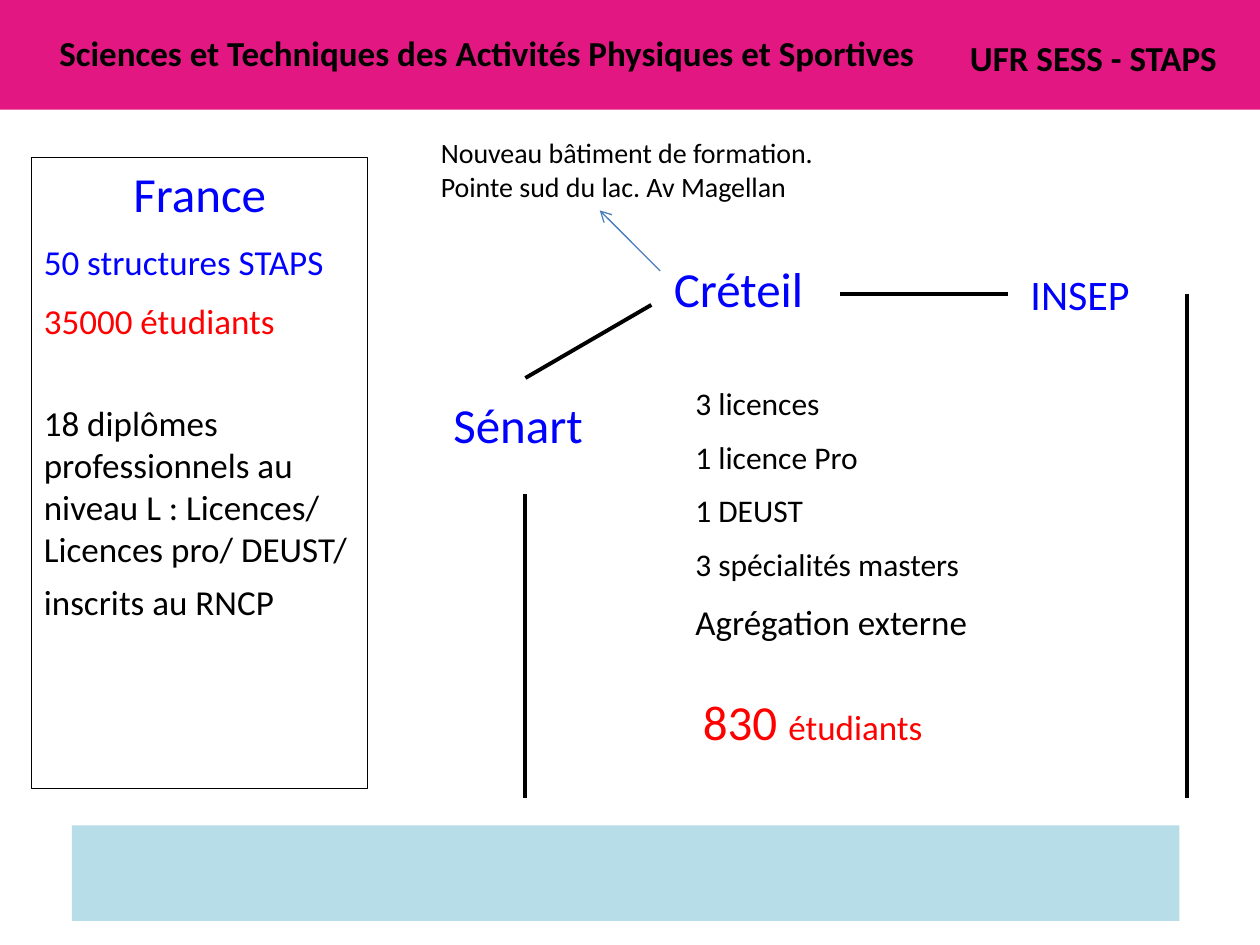
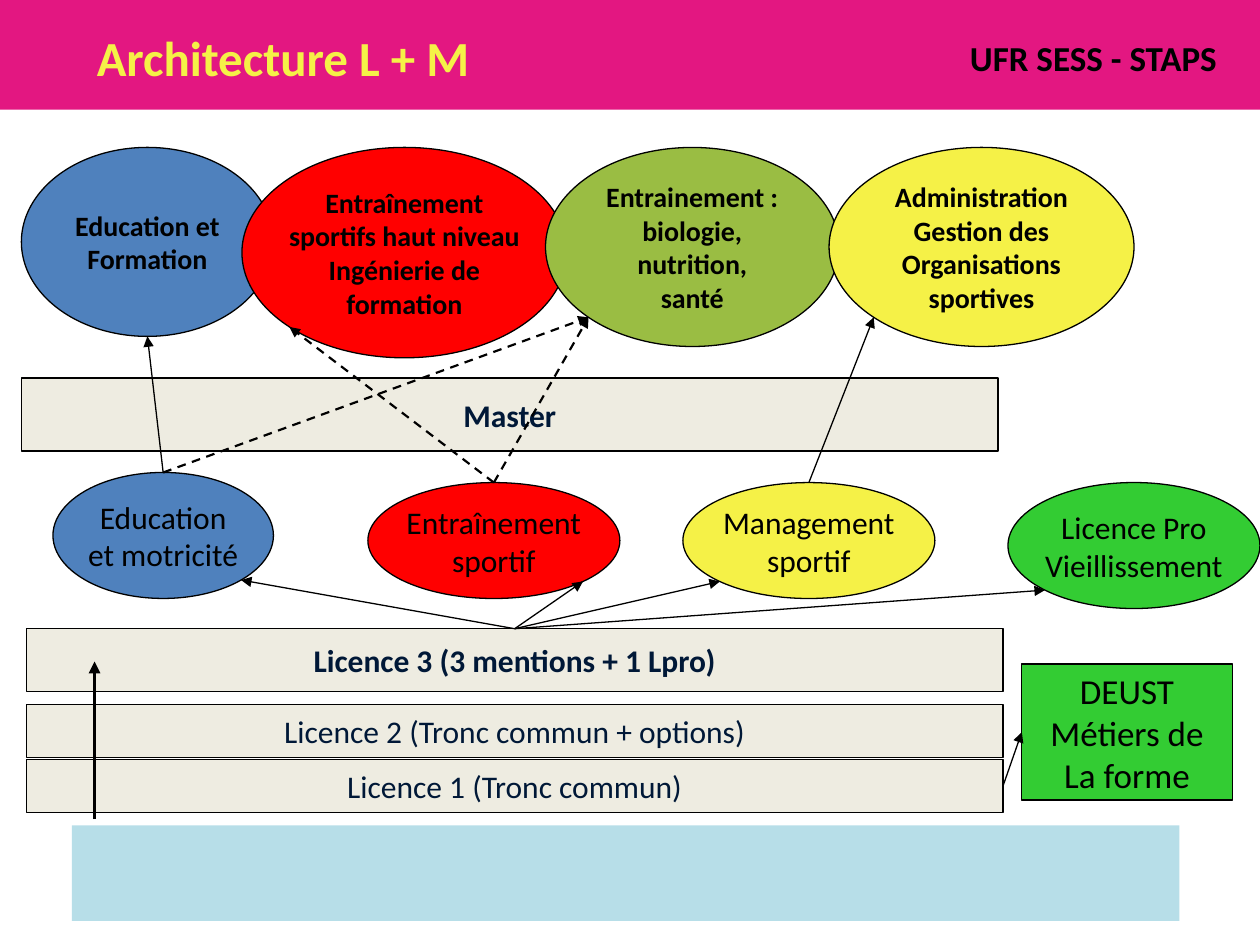
from dataclasses import dataclass
from math import sqrt
from typing import NamedTuple, Optional

from lxml.etree import SubElement
from pptx import Presentation
from pptx.dml.color import RGBColor
from pptx.enum.dml import MSO_LINE
from pptx.enum.shapes import MSO_CONNECTOR, MSO_SHAPE
from pptx.enum.text import MSO_ANCHOR, PP_ALIGN
from pptx.oxml.ns import qn
from pptx.util import Inches, Pt

FONT = "Calibri"
BLACK = RGBColor(0x00, 0x00, 0x00)
BLUE = RGBColor(0x00, 0x00, 0xFF)
RED = RGBColor(0xFF, 0x00, 0x00)
NAVY = RGBColor(0x00, 0x18, 0x37)
YELLOW = RGBColor(0xF5, 0xF1, 0x47)
OLIVE = RGBColor(0x9A, 0xBD, 0x43)
GREEN = RGBColor(0x33, 0xCC, 0x33)
STEEL = RGBColor(0x4F, 0x81, 0xBD)
ARROW_BLUE = RGBColor(0x4B, 0x7E, 0xBC)
CREAM = RGBColor(0xEE, 0xEC, 0xE1)
PINK = RGBColor(0xE3, 0x17, 0x81)
PALE_BLUE = RGBColor(0xB7, 0xDE, 0xE8)

Point = tuple[float, float]


class Run(NamedTuple):
    text: str
    size: float = 20
    color: RGBColor = BLACK
    bold: bool = False


class Para(NamedTuple):
    runs: list[Run]
    before: float = 0
    align: PP_ALIGN = PP_ALIGN.LEFT
    spacing: Optional[float] = None


class Box(NamedTuple):
    left: float
    top: float
    width: float
    height: float

    def inches(self):
        return [Inches(v) for v in self]


@dataclass
class Node:
    """A filled shape with centred lines of text and points for arrows."""
    lines: list[str]
    box: Box
    fill: RGBColor
    shape: MSO_SHAPE = MSO_SHAPE.OVAL
    size: float = 18
    color: RGBColor = BLACK
    bold: bool = False

    def at(self, dx: float, dy: float) -> Point:
        """Point at dx, dy half-sizes from the centre."""
        left, top, width, height = self.box
        return left + width * (1 + dx) / 2, top + height * (1 + dy) / 2

    @property
    def top(self) -> Point:
        return self.at(0, -1)

    @property
    def bottom(self) -> Point:
        return self.at(0, 1)

    @property
    def lower_left(self) -> Point:
        return self.at(-sqrt(0.5), sqrt(0.5))

    @property
    def lower_right(self) -> Point:
        return self.at(sqrt(0.5), sqrt(0.5))


def write(tf, paras: list[Para]) -> None:
    for i, para in enumerate(paras):
        p = tf.paragraphs[0] if i == 0 else tf.add_paragraph()
        p.alignment = para.align
        p.space_before = Pt(para.before)
        if para.spacing:
            p.line_spacing = para.spacing
        for run in para.runs:
            r = p.add_run()
            r.text = run.text
            r.font.name = FONT
            r.font.size = Pt(run.size)
            r.font.bold = run.bold
            r.font.color.rgb = run.color


def add_text(slide, box: Box, *paras: Para) -> None:
    tf = slide.shapes.add_textbox(*box.inches()).text_frame
    tf.word_wrap = True
    write(tf, list(paras))


def add_block(slide, box: Box, fill: Optional[RGBColor] = None,
              line: Optional[RGBColor] = None, shape=MSO_SHAPE.RECTANGLE):
    sp = slide.shapes.add_shape(shape, *box.inches())
    sp.shadow.inherit = False
    if fill is None:
        sp.fill.background()
    else:
        sp.fill.solid()
        sp.fill.fore_color.rgb = fill
    if line is None:
        sp.line.fill.background()
    else:
        sp.line.color.rgb = line
        sp.line.width = Pt(0.75)
    return sp


def add_node(slide, node: Node) -> None:
    tf = add_block(slide, node.box, node.fill, BLACK, node.shape).text_frame
    tf.word_wrap = False
    tf.vertical_anchor = MSO_ANCHOR.MIDDLE
    write(tf, [Para([Run(text, node.size, node.color, node.bold)],
                    align=PP_ALIGN.CENTER) for text in node.lines])


def add_line(slide, start: Point, end: Point, width: float = 2.25,
             color: RGBColor = BLACK, head: str = "", dashed: bool = False) -> None:
    cxn = slide.shapes.add_connector(
        MSO_CONNECTOR.STRAIGHT, *(Inches(v) for v in (*start, *end)))
    cxn.line.color.rgb = color
    cxn.line.width = Pt(width)
    if dashed:
        cxn.line.dash_style = MSO_LINE.DASH
    if head:
        SubElement(cxn.line._get_or_add_ln(), qn("a:tailEnd"), type=head)
    SubElement(cxn._element.spPr, qn("a:effectLst"))


def new_slide(prs):
    """Blank slide with the shared bands and department name."""
    slide = prs.slides.add_slide(prs.slide_layouts[6])
    add_block(slide, Box(0.57, 6.55, 8.79, 0.76), PALE_BLUE)
    add_block(slide, Box(0, 0, 10, 0.87), PINK)
    add_text(slide, Box(7.6, 0.24, 2.24, 0.44),
             Para([Run("UFR SESS - STAPS", bold=True)]))
    return slide


def build_sites(prs) -> None:
    s = new_slide(prs)
    add_text(s, Box(0.29, 0.2, 7.15, 0.44), Para(
        [Run("Sciences et Techniques des Activités Physiques et Sportives", bold=True)],
        align=PP_ALIGN.CENTER))

    tf = add_block(s, Box(0.25, 1.25, 2.67, 5.01), line=BLACK).text_frame
    tf.word_wrap = True
    tf.vertical_anchor = MSO_ANCHOR.TOP
    write(tf, [
        Para([Run("France", 28, BLUE)], align=PP_ALIGN.CENTER),
        Para([Run("50 structures STAPS", color=BLUE)], 10),
        Para([Run("35000 étudiants", color=RED)], 10),
        Para([Run("18 diplômes professionnels au niveau L : "
                  "Licences/ Licences pro/ DEUST/")], 34),
        Para([Run("inscrits au RNCP")], 10, spacing=0.85),
    ])

    for site, size, box in (("INSEP", 24, Box(8.08, 2.08, 1.25, 0.5)),
                            ("Créteil", 28, Box(5.25, 2, 1.75, 0.57)),
                            ("Sénart", 28, Box(3.5, 3.08, 1.42, 0.57))):
        add_text(s, box, Para([Run(site, size, BLUE)]))

    add_text(s, Box(5.48, 5.51, 2.17, 0.5),
             Para([Run("830 ", 28, RED), Run("étudiants", color=RED)], spacing=0.85))
    courses = ["3 licences", "1 licence Pro", "1 DEUST", "3 spécialités masters"]
    add_text(s, Box(5.42, 3, 3.33, 2.8),
             *(Para([Run(course, 18)], 9 if i else 0) for i, course in enumerate(courses)),
             Para([Run("Agrégation externe")], 10))

    for start, end in (((8, 2.33), (6.67, 2.33)), ((5.17, 2.42), (4.17, 3)),
                       ((4.17, 3.92), (4.17, 6.33)), ((9.42, 2.33), (9.42, 6.33))):
        add_line(s, start, end)
    add_line(s, (5.24, 2.15), (4.76, 1.67), 0.75, ARROW_BLUE, "arrow")
    add_text(s, Box(3.4, 1.03, 4.15, 0.64),
             Para([Run("Nouveau bâtiment de formation.", 16)]),
             Para([Run("Pointe sud du lac. Av Magellan", 16)]))


def level(text: str, left: float, top: float, height: float, bold: bool = False) -> Node:
    return Node([text], Box(left, top, 7.75, height), CREAM,
                MSO_SHAPE.RECTANGLE, color=NAVY, bold=bold)


def master(lines: list[str], left: float, width: float, height: float,
           fill: RGBColor) -> Node:
    return Node(lines, Box(left, 1.17, width, height), fill, size=16, bold=True)


def build_architecture(prs) -> None:
    s = new_slide(prs)
    licence1 = level("Licence 1 (Tronc commun)", 0.21, 6.03, 0.42)
    licence2 = level("Licence 2 (Tronc commun + options)", 0.21, 5.59, 0.42)
    licence3 = level("Licence 3 (3 mentions + 1 Lpro)", 0.21, 4.99, 0.5, True)
    master_bar = level("Master", 0.17, 3, 0.58, True)

    education = Node(["Education", "et motricité"], Box(0.42, 3.75, 1.75, 1), STEEL)
    training = Node(["Entraînement", "sportif"], Box(2.92, 3.83, 2, 0.92), RED)
    management = Node(["Management", "sportif"], Box(5.42, 3.83, 2, 0.92), YELLOW)
    licence_pro = Node(["Licence Pro", "Vieillissement"], Box(8, 3.83, 2, 1), GREEN)
    deust = Node(["DEUST", "Métiers de", "La forme"], Box(8.11, 5.27, 1.67, 1.08),
                 GREEN, MSO_SHAPE.RECTANGLE, 20)

    teaching = master(["Education et", "Formation"], 0.17, 2, 1.5, STEEL)
    elite = master(["Entraînement", "sportifs haut niveau", "Ingénierie de", "formation"],
                   1.92, 2.58, 1.67, RED)
    health = master(["Entrainement :", "biologie,", "nutrition,", "santé"],
                    4.33, 2.33, 1.58, OLIVE)
    administration = master(["Administration", "Gestion des", "Organisations", "sportives"],
                            6.58, 2.42, 1.58, YELLOW)

    for node in (licence1, licence2, licence3, education, training, management,
                 licence_pro, deust, master_bar, teaching, elite, health, administration):
        add_node(s, node)

    for start, end in ((management.top, administration.lower_left),
                       (education.top, teaching.bottom),
                       (licence1.at(1, 0), deust.at(-1, 0)),
                       (licence3.top, education.lower_right),
                       (licence3.top, training.lower_right),
                       (licence3.top, management.lower_left),
                       (licence3.top, licence_pro.lower_left)):
        add_line(s, start, end, 0.75, head="triangle")
    for start, end in ((training.top, health.lower_left),
                       (training.top, elite.lower_left),
                       (education.top, health.lower_left)):
        add_line(s, start, end, 1.25, head="triangle", dashed=True)
    add_line(s, (0.75, 6.5), (0.75, 5.25), head="triangle")

    add_text(s, Box(0.67, 0.17, 4.17, 0.57),
             Para([Run("Architecture L + M", 28, YELLOW, True)]))


def main() -> None:
    prs = Presentation()
    prs.slide_width, prs.slide_height = Inches(10), Inches(7.5)
    build_sites(prs)
    build_architecture(prs)
    prs.save("out.pptx")


if __name__ == "__main__":
    main()
